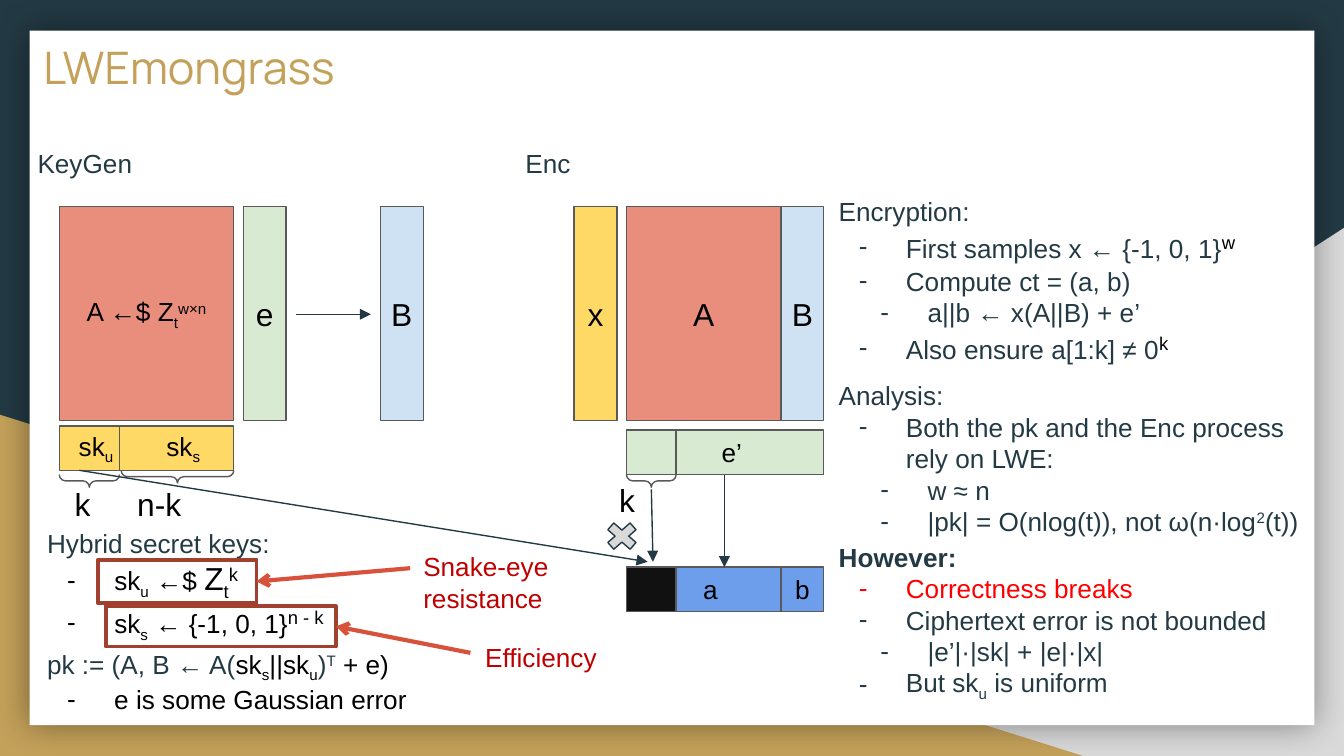
from lxml.etree import SubElement
from pptx import Presentation
from pptx.dml.color import RGBColor
from pptx.enum.shapes import MSO_CONNECTOR, MSO_SHAPE
from pptx.enum.text import MSO_ANCHOR, MSO_AUTO_SIZE, PP_ALIGN
from pptx.oxml.ns import qn
from pptx.util import Cm, Pt

COLORS = {
    "navy": "233A44", "gold": "C4A15A", "silver": "D9D9D9", "white": "FFFFFF",
    "black": "000000", "ink": "111111", "grey": "595959", "coral": "E98E7C",
    "yellow": "FFD966", "green": "D9EAD3", "sky": "CFE2F3", "blue": "6D9EEB",
    "red": "FF0000", "crimson": "C00000", "brick": "A1402F", "tomato": "D8513A",
}

# Span formats
DARK = {"color": "black"}
BIG = {"color": "black", "size": 17}
SUB = {"color": "black", "baseline": -25}
SUP = {"color": "black", "baseline": 30}
BIG_SUP = {**BIG, "baseline": 30}

# Lists: position, then (level, spans); level 0 is a heading without a bullet
LISTS = [
    ((0.64, 9.72, 6.3, 2.57), [
        (0, ["Hybrid secret keys:"]),
        (1, [("sk", DARK), ("u", SUB), (" ←$ ", DARK), ("Z", BIG),
             ("t", {**BIG, "baseline": -25}), ("k", BIG_SUP)]),
        (1, [("sk", DARK), ("s", SUB), (" ← {-1, 0, 1}", DARK), ("n - k", BIG_SUP)]),
    ]),
    ((15.6, 3.45, 8.08, 3.76), [
        (0, ["Encryption:"]),
        (1, ["First samples x ← {-1, 0, 1}", ("w", BIG_SUP)]),
        (1, ["Compute ct = (a, b)"]),
        (2, ["a||b ← x(A||B) + e’"]),
        (1, ["Also ensure a[1:k] ≠ 0", ("k", BIG_SUP)]),
    ]),
    ((15.6, 6.93, 9.42, 3.51), [
        (0, ["Analysis:"]),
        (1, ["Both the pk and the Enc process rely on LWE:"]),
        (2, ["w ≈ n"]),
        (2, ["|pk| = O(nlog(t)), not ω(n·log", ("2", {"baseline": 30}), "(t))"]),
    ]),
    ((15.6, 9.98, 8.97, 3.51), [
        (0, [("However:", {"bold": True})]),
        (1, [("Correctness breaks", {"color": "red"})]),
        (1, ["Ciphertext error is not bounded"]),
        (2, ["|e’|·|sk| + |e|·|x|"]),
        (1, ["But sk", ("u", {"baseline": -25}), " is uniform"]),
    ]),
    ((0.64, 12, 7.54, 1.7), [
        (0, ["pk := (A, B ← A(", ("sk", DARK), ("s", SUB), ("||sk", DARK), ("u", SUB),
             ")", ("T", {"baseline": 30}), (" + e)", DARK)]),
        (1, [("e is some Gaussian error", DARK)]),
    ]),
]

# Matrix cells: row, left, width, fill, spans
ROWS = {"matrix": (3.91, 4.04), "key": (8.05, 0.84), "error": (8.13, 0.84), "cipher": (10.72, 0.84)}
NARROW = 0.81
CELLS = [
    ("matrix", 1.12, 3.3, "coral", [("A ←$ Z", DARK), ("t", SUB), ("w×n", SUP)]),
    ("matrix", 4.6, NARROW, "green", [("e", BIG)]),
    ("matrix", 7.19, NARROW, "sky", [("B", BIG)]),
    ("matrix", 10.85, NARROW, "yellow", [("x", BIG)]),
    ("matrix", 11.84, 2.92, "coral", [("A", BIG)]),
    ("matrix", 14.76, NARROW, "sky", [("B", BIG)]),
    ("key", 1.12, 1.14, "yellow", [("sk", DARK), ("u", SUB)]),
    ("key", 2.26, 2.16, "yellow", [("sk", DARK), ("s", SUB)]),
    ("error", 11.84, 3.73, "green", [("e’", DARK)]),
    ("error", 11.84, 0.94, None, []),
    ("cipher", 11.84, 2.92, "blue", [("a", DARK)]),
    ("cipher", 14.76, NARROW, "blue", [("b", DARK)]),
    ("cipher", 11.84, 0.94, "ink", []),
]

# Labels: position, text, format, centred, top inset
LABELS = [
    ((0.46, 2.54, 2.62, 1.12), "KeyGen", {}, False, 0.25),
    ((9.68, 2.54, 2.62, 1.12), "Enc", {}, False, 0.25),
    ((0.81, 8.92, 1.5, 0.71), "k", BIG, True, 0.25),
    ((2.26, 8.92, 1.5, 0.71), "n-k", BIG, True, 0.25),
    ((11.1, 8.84, 1.5, 0.71), "k", BIG, True, 0.25),
    ((7.75, 10.28, 3.86, 1.45), "Snake-eye resistance", {"color": "crimson"}, False, 0.13),
    ((8.92, 12, 3.86, 0.86), "Efficiency", {"color": "crimson"}, False, 0.13),
]
BRACES = [(1.12, 8.97, 1.14), (2.29, 8.89, 2.13), (11.84, 8.97, 0.94)]  # left, top, width
FRAMES = [(1.85, 10.58, 3, 0.82), (2.0, 11.46, 4.35, 0.76)]
ARROWS = [  # from x, from y, to x, to y, colour, width, head
    (5.59, 5.94, 7.01, 5.94, "navy", 0.75, "triangle"),
    (13.69, 8.97, 13.69, 10.72, "navy", 0.75, "triangle"),
    (1.5, 8.89, 12.24, 10.62, "navy", 0.75, "triangle"),
    (12.31, 9.25, 12.34, 10.62, "navy", 0.75, "triangle"),
    (7.75, 10.74, 4.85, 10.99, "tomato", 2.25, "arrow"),
    (8.89, 12.34, 6.35, 11.84, "tomato", 2.25, "arrow"),
]


def rgb(name):
    return RGBColor.from_string(COLORS[name])


def add_shape(kind, place, fill=None, line=None, width=0.75):
    shape = page.shapes.add_shape(kind, *map(Cm, place))
    shape.shadow.inherit = False
    if fill:
        shape.fill.solid()
        shape.fill.fore_color.rgb = rgb(fill)
    else:
        shape.fill.background()
    if line:
        shape.line.color.rgb = rgb(line)
        shape.line.width = Pt(width)
    else:
        shape.line.fill.background()
    return shape


def set_frame(box, anchor=MSO_ANCHOR.TOP, left=0.25, right=0.25, top=0.25):
    formats = {"word_wrap": True, "auto_size": MSO_AUTO_SIZE.NONE, "vertical_anchor": anchor,
               "margin_left": Cm(left), "margin_right": Cm(right),
               "margin_top": Cm(top), "margin_bottom": Cm(top)}
    for name, value in formats.items():
        setattr(box.text_frame, name, value)
    return box.text_frame


def write(para, spans, align=PP_ALIGN.LEFT):
    para.alignment = align
    para.space_before = para.space_after = Pt(0)
    for item in spans:
        text, look = (item, {}) if isinstance(item, str) else item
        span = para.add_run()
        span.text = text
        formats = {"name": look.get("font", "Arial"), "size": Pt(look.get("size", 14)),
                   "bold": look.get("bold", False)}
        for name, value in formats.items():
            setattr(span.font, name, value)
        span.font.color.rgb = rgb(look.get("color", "navy"))
        if "baseline" in look:
            span.font._element.set("baseline", str(look["baseline"] * 1000))


def set_bullet(para, level, color):
    props = para._p.get_or_add_pPr()
    margin, indent = [(0, 0), (1.27, -0.89), (1.68, -0.89)][level]
    props.set("marL", str(Cm(margin)))
    props.set("indent", str(Cm(indent)))
    if level == 0:
        SubElement(props, qn("a:buNone"))
        return
    para.level = level - 1
    SubElement(SubElement(props, qn("a:buClr")), qn("a:srgbClr"), val=COLORS[color])
    SubElement(props, qn("a:buFont"), typeface="Arial")
    SubElement(props, qn("a:buChar"), char="-")


def place_box(box, place):
    box.left, box.top, box.width, box.height = map(Cm, place)


deck = Presentation()
deck.slide_width, deck.slide_height = Cm(25.4), Cm(14.29)
page = deck.slides.add_slide(deck.slide_layouts[4])
page.background.fill.solid()
page.background.fill.fore_color.rgb = rgb("navy")
title = page.shapes.title

# Backdrop: two triangles and a white card, behind the placeholders
right = add_shape(MSO_SHAPE.RIGHT_TRIANGLE, (9.96, 4.31, 15.44, 9.98), "silver")
right._element.spPr.find(qn("a:xfrm")).set("flipH", "1")
left = add_shape(MSO_SHAPE.RIGHT_TRIANGLE, (0, 7.84, 20.47, 6.45), "gold")
card = add_shape(MSO_SHAPE.RECTANGLE, (0.56, 0.58, 24.28, 13.13), "white")
effects = card._element.spPr.find(qn("a:effectLst"))
shadow = SubElement(effects, qn("a:outerShdw"), blurRad=str(Pt(18)), dist="0", algn="ctr", rotWithShape="0")
SubElement(SubElement(shadow, qn("a:srgbClr"), val=COLORS["black"]), qn("a:alpha"), val="40000")
for backdrop in (right, left, card):
    title._element.addprevious(backdrop._element)

# Title
place_box(title, (0.64, 0.58, 21.36, 1.5))
heading = set_frame(title, MSO_ANCHOR.MIDDLE, 0.18, 0.18, 0.1).paragraphs[0]
heading.line_spacing = 0.85
write(heading, [("LWEmongrass", {"font": "Manrope", "size": 24, "color": "gold"})])

# Lists: the four body placeholders, then a text box for the last
bodies = [box for box in page.placeholders if box.placeholder_format.idx in (1, 2, 3, 4)]
bodies.append(page.shapes.add_textbox(0, 0, 0, 0))
for box, (place, items) in zip(bodies, LISTS):
    place_box(box, place)
    frame = set_frame(box)
    for number, (level, spans) in enumerate(items):
        para = frame.add_paragraph() if number else frame.paragraphs[0]
        write(para, spans)
        first = spans[0]
        color = "navy" if isinstance(first, str) else first[1].get("color", "navy")
        set_bullet(para, level, color)

# Matrix cells
for row, x, width, fill, spans in CELLS:
    top, height = ROWS[row]
    cell = add_shape(MSO_SHAPE.RECTANGLE, (x, top, width, height), fill, "grey")
    if spans:
        frame = set_frame(cell, MSO_ANCHOR.MIDDLE, left=0 if width == NARROW else 0.25,
                          right=0.25 if row == "matrix" and width > NARROW else 0)
        write(frame.paragraphs[0], spans, PP_ALIGN.CENTER)

# Braces: tall shapes turned a quarter to lie under the cells
for x, top, width in BRACES:
    depth = 0.24
    brace = add_shape(MSO_SHAPE.LEFT_BRACE, (x + (width - depth) / 2, top + (depth - width) / 2, depth, width),
                      line="grey")
    brace.rotation = 270
    brace.adjustments[0], brace.adjustments[1] = 0.5, 0.5

# Labels
for place, text, look, centred, top in LABELS:
    box = page.shapes.add_textbox(*map(Cm, place))
    write(set_frame(box, top=top).paragraphs[0], [(text, look)], PP_ALIGN.CENTER if centred else PP_ALIGN.LEFT)

# Frames, arrows and cross
for place in FRAMES:
    add_shape(MSO_SHAPE.RECTANGLE, place, line="brick", width=2)
for *ends, color, width, head in ARROWS:
    arrow = page.shapes.add_connector(MSO_CONNECTOR.STRAIGHT, *map(Cm, ends))
    arrow.line.color.rgb = rgb(color)
    arrow.line.width = Pt(width)
    SubElement(arrow.line._get_or_add_ln(), qn("a:tailEnd"), type=head)
    SubElement(arrow._element.spPr, qn("a:effectLst"))
cross = add_shape(MSO_SHAPE.MATH_MULTIPLY, (11.35, 9.78, 0.81, 0.71), "silver", "navy")
cross.adjustments[0] = 0.24

deck.save("out.pptx")
